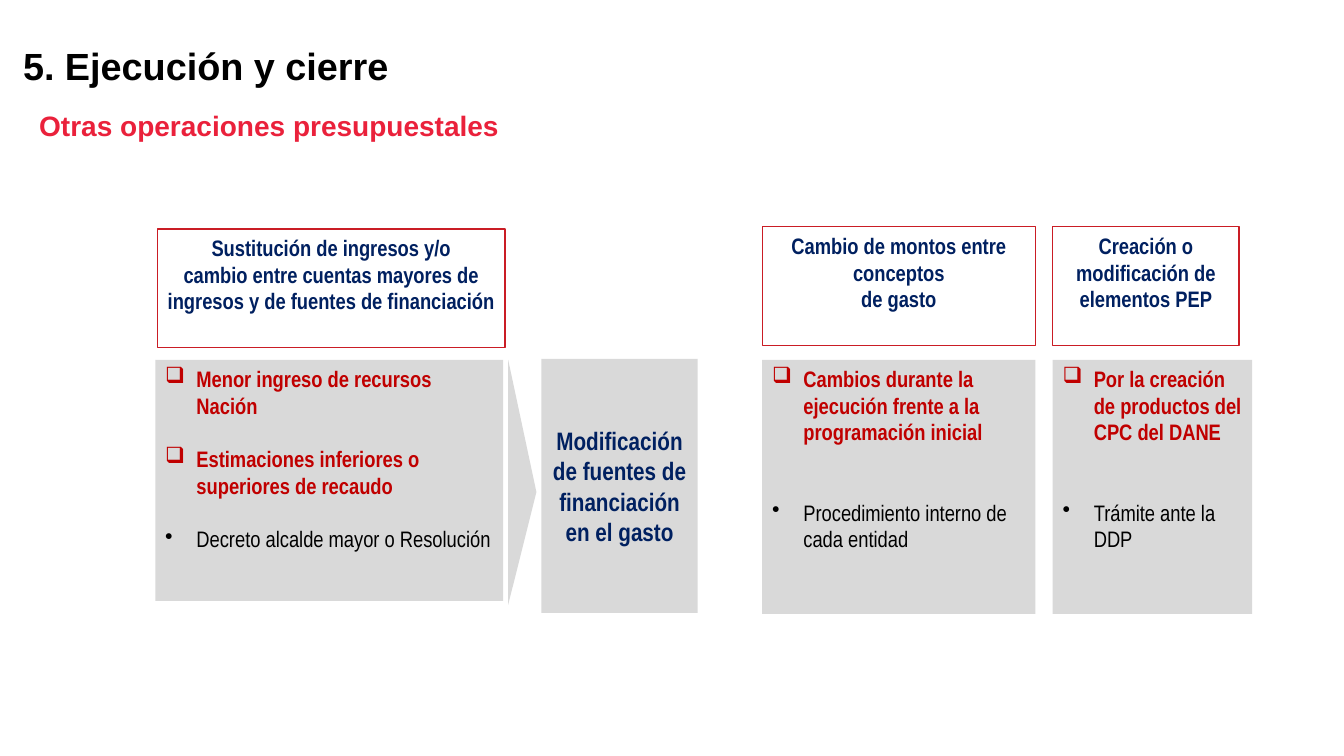
from lxml import etree
from pptx import Presentation
from pptx.dml.color import RGBColor
from pptx.enum.shapes import MSO_SHAPE
from pptx.enum.text import MSO_ANCHOR, PP_ALIGN
from pptx.oxml.ns import qn
from pptx.util import Inches, Pt

RECTANGLE, TRIANGLE = MSO_SHAPE.RECTANGLE, MSO_SHAPE.ISOSCELES_TRIANGLE
TOP, MIDDLE = MSO_ANCHOR.TOP, MSO_ANCHOR.MIDDLE
LEFT, CENTER = PP_ALIGN.LEFT, PP_ALIGN.CENTER

BLACK = RGBColor(0x00, 0x00, 0x00)
WHITE = RGBColor(0xFF, 0xFF, 0xFF)
GRAY = RGBColor(0xD9, 0xD9, 0xD9)
NAVY = RGBColor(0x00, 0x20, 0x60)
DARK_RED = RGBColor(0xC0, 0x00, 0x00)
BORDER_RED = RGBColor(0xCA, 0x1D, 0x25)
BRIGHT_RED = RGBColor(0xEA, 0x21, 0x3B)

LINE_GAP = 19
BULLET_INDENT = Inches(0.31)

OPERATIONS = [
    {
        "header_box": (1.56, 2.27, 3.45, 1.18),
        "header": ["Sustitución de ingresos y/o",
                   "cambio entre cuentas mayores de ingresos y de fuentes de financiación"],
        "detail_box": (1.54, 3.57, 3.45, 2.39),
        "causes": ["Menor ingreso de recursos Nación",
                   "Estimaciones inferiores o superiores de recaudo"],
        "procedure": "Decreto alcalde mayor o Resolución",
        "procedure_gap": LINE_GAP,
    },
    {
        "header_box": (7.56, 2.25, 2.71, 1.18),
        "header": ["Cambio de montos entre conceptos", "de gasto"],
        "detail_box": (7.56, 3.57, 2.71, 2.52),
        "causes": ["Cambios durante la ejecución frente a la programación inicial"],
        "procedure": "Procedimiento interno de cada entidad",
        "procedure_gap": 2 * LINE_GAP,
    },
    {
        "header_box": (10.44, 2.25, 1.85, 1.18),
        "header": ["Creación o modificación de elementos PEP"],
        "detail_box": (10.44, 3.57, 1.98, 2.52),
        "causes": ["Por la creación de productos del CPC del DANE"],
        "procedure": "Trámite ante la DDP",
        "procedure_gap": 2 * LINE_GAP,
    },
]


def set_font(paragraph, name, size, color, bold=True):
    font = paragraph.font
    font.name = name
    font.size = Pt(size)
    font.bold = bold
    font.color.rgb = color


def add_heading(slide, box, text, size, color):
    heading = slide.shapes.add_textbox(*map(Inches, box)).text_frame
    heading.word_wrap = True
    heading.text = text
    set_font(heading.paragraphs[0], "Arial", size, color)


def add_panel(slide, box, fill, border=None, kind=RECTANGLE):
    panel = slide.shapes.add_shape(kind, *map(Inches, box))
    panel.shadow.inherit = False
    panel.fill.solid()
    panel.fill.fore_color.rgb = fill
    if border is None:
        panel.line.fill.background()
    else:
        panel.line.color.rgb = border
        panel.line.width = Pt(1)
    return panel


def write_centered(panel, lines, size, anchor):
    frame = panel.text_frame
    frame.word_wrap = True
    frame.vertical_anchor = anchor
    frame.text = "\n".join(lines)
    for paragraph in frame.paragraphs:
        paragraph.alignment = CENTER
        set_font(paragraph, "Arial Narrow", size, NAVY)


def add_bullet(paragraph, symbol):
    properties = paragraph._p.get_or_add_pPr()
    properties.set("marL", str(BULLET_INDENT))
    properties.set("indent", str(-BULLET_INDENT))
    etree.SubElement(properties, qn("a:buChar")).set("char", symbol)


def write_details(panel, causes, procedure, procedure_gap):
    frame = panel.text_frame
    frame.word_wrap = True
    frame.vertical_anchor = TOP
    frame.text = "\n".join([*causes, procedure])
    *cause_items, procedure_item = frame.paragraphs
    for item in cause_items:
        add_bullet(item, "❑")
        set_font(item, "Arial Narrow", 16, DARK_RED)
    for item in cause_items[1:]:
        item.space_before = Pt(LINE_GAP)
    add_bullet(procedure_item, "•")
    set_font(procedure_item, "Arial Narrow", 16, BLACK, bold=False)
    procedure_item.space_before = Pt(procedure_gap)
    for item in frame.paragraphs:
        item.alignment = LEFT


def add_operation(slide, operation):
    header = add_panel(slide, operation["header_box"], WHITE, BORDER_RED)
    write_centered(header, operation["header"], 16, TOP)
    details = add_panel(slide, operation["detail_box"], GRAY)
    write_details(details, operation["causes"], operation["procedure"],
                  operation["procedure_gap"])


def add_effect(slide, box, text):
    left, top, width, height = box
    arrow_length, arrow_span, gap = 0.28, 2.43, 0.05
    arrow_center_x = left - gap - arrow_length / 2
    arrow_center_y = top + 0.01 + arrow_span / 2
    arrow = add_panel(slide, (arrow_center_x - arrow_span / 2,
                              arrow_center_y - arrow_length / 2,
                              arrow_span, arrow_length), GRAY, kind=TRIANGLE)
    arrow.rotation = 90
    arrow.adjustments[0] = 0.54
    effect = add_panel(slide, box, GRAY)
    write_centered(effect, [text], 18, MIDDLE)


def main():
    presentation = Presentation()
    presentation.slide_width = Inches(13.33)
    presentation.slide_height = Inches(7.5)
    slide = presentation.slides.add_slide(presentation.slide_layouts[6])
    add_heading(slide, (0.13, 0.37, 8.71, 0.56), "5. Ejecución y cierre", 27, BLACK)
    add_heading(slide, (0.29, 1.03, 11.68, 0.44),
                "Otras operaciones presupuestales", 20, BRIGHT_RED)
    for operation in OPERATIONS:
        add_operation(slide, operation)
    add_effect(slide, (5.37, 3.56, 1.55, 2.52),
               "Modificación de fuentes de financiación en el gasto")
    presentation.save("out.pptx")


if __name__ == "__main__":
    main()
